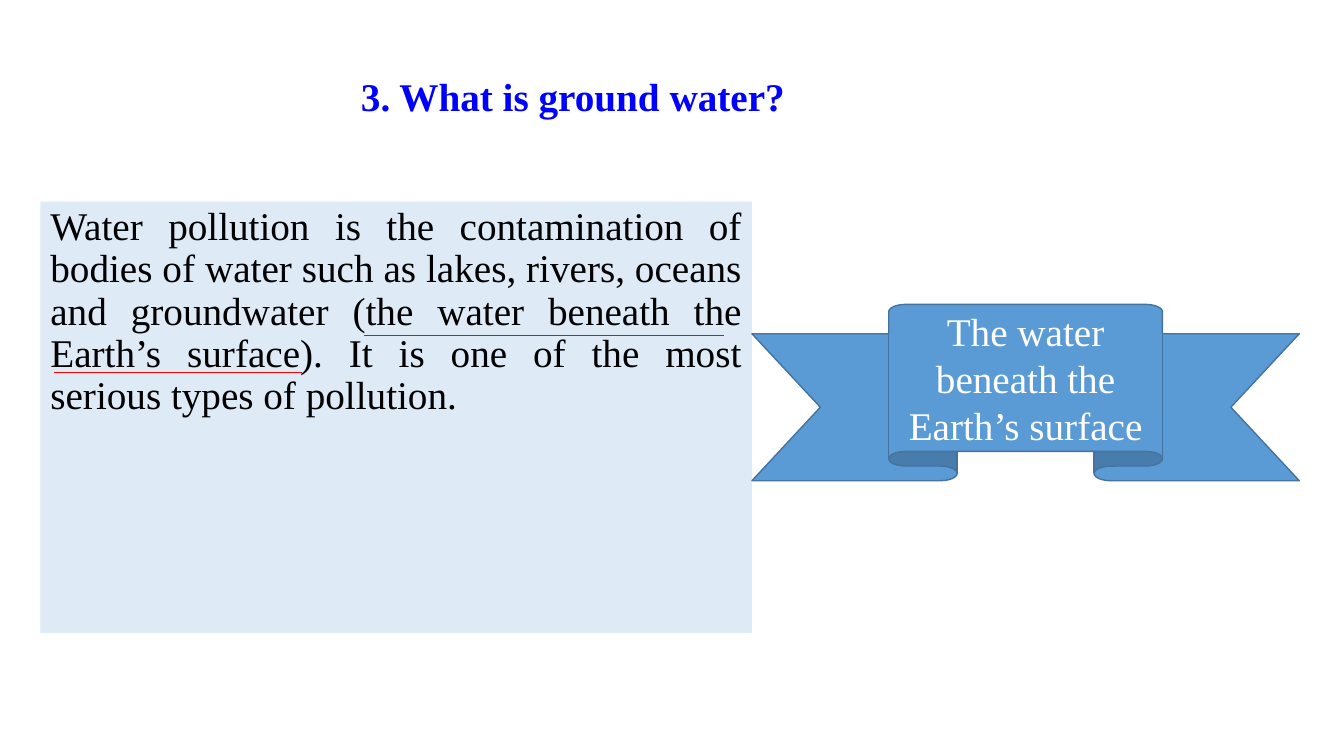
from dataclasses import dataclass

from lxml import etree
from pptx import Presentation
from pptx.dml.color import RGBColor
from pptx.enum import shapes, text
from pptx.oxml import ns
from pptx.util import Pt


@dataclass(frozen=True)
class Theme:
    font: str = "Times New Roman"
    size: float = 28
    title: str = "0000FF"
    body: str = "000000"
    panel: str = "DEEBF7"
    ribbon: str = "5B9BD5"
    ribbon_line: str = "43739E"
    ribbon_text: str = "FFFFFF"
    underline: str = "FF0000"


THEME = Theme()


def color(value):
    return RGBColor.from_string(value)


def place(shape, left, top, width, height):
    shape.left, shape.top = Pt(left), Pt(top)
    shape.width, shape.height = Pt(width), Pt(height)


def write(shape, words, ink, alignment, anchor, bold=False, wrap=True):
    """Fill the shape with one formatted paragraph and return it."""
    frame = shape.text_frame
    frame.text = words
    frame.word_wrap = wrap
    frame.auto_size = text.MSO_AUTO_SIZE.NONE
    frame.vertical_anchor = anchor
    paragraph = frame.paragraphs[0]
    paragraph.alignment = alignment
    font = paragraph.font
    font.name, font.size, font.bold = THEME.font, Pt(THEME.size), bold
    font.color.rgb = color(ink)
    return paragraph


def remove_bullet(paragraph):
    properties = paragraph._p.get_or_add_pPr()
    properties.set("marL", "0")
    properties.set("indent", "0")
    etree.SubElement(properties, ns.qn("a:buNone"))


def add_title(slide, words):
    title = slide.shapes.title
    place(title, 249, 48.2, 320.4, 41)
    write(title, words, THEME.title, text.PP_ALIGN.CENTER,
          text.MSO_ANCHOR.MIDDLE, bold=True, wrap=False)


def add_body(slide, words):
    body = slide.placeholders[1]
    place(body, 28.8, 144, 508.3, 308.2)
    body.fill.solid()
    body.fill.fore_color.rgb = color(THEME.panel)
    paragraph = write(body, words, THEME.body, text.PP_ALIGN.JUSTIFY,
                      text.MSO_ANCHOR.TOP)
    paragraph.line_spacing = 0.9
    paragraph.space_before = Pt(10)
    remove_bullet(paragraph)


def add_ribbon(slide, words):
    ribbon = slide.shapes.add_shape(
        shapes.MSO_SHAPE.UP_RIBBON, Pt(537.1), Pt(217.4), Pt(391), Pt(126))
    ribbon.shadow.inherit = False
    ribbon.fill.solid()
    ribbon.fill.fore_color.rgb = color(THEME.ribbon)
    ribbon.line.color.rgb = color(THEME.ribbon_line)
    ribbon.line.width = Pt(1)
    write(ribbon, words, THEME.ribbon_text, text.PP_ALIGN.CENTER,
          text.MSO_ANCHOR.MIDDLE)


def add_underline(slide, start, end, y):
    line = slide.shapes.add_connector(
        shapes.MSO_CONNECTOR.STRAIGHT, Pt(start), Pt(y), Pt(end), Pt(y))
    line.line.color.rgb = color(THEME.underline)
    line.line.width = Pt(0.5)
    etree.SubElement(line._element.spPr, ns.qn("a:effectLst"))


def main():
    presentation = Presentation()
    presentation.slide_width, presentation.slide_height = Pt(960), Pt(540)
    slide = presentation.slides.add_slide(presentation.slide_layouts[1])
    add_title(slide, "3. What is ground water?")
    add_body(slide, "Water pollution is the contamination of bodies of water "
                    "such as lakes, rivers, oceans and groundwater (the water "
                    "beneath the Earth’s surface). It is one of the most "
                    "serious types of pollution.")
    add_ribbon(slide, "The water beneath the Earth’s surface")
    add_underline(slide, 38.9, 216, 265.7)
    add_underline(slide, 259.9, 517, 239.8)
    presentation.save("out.pptx")


if __name__ == "__main__":
    main()
